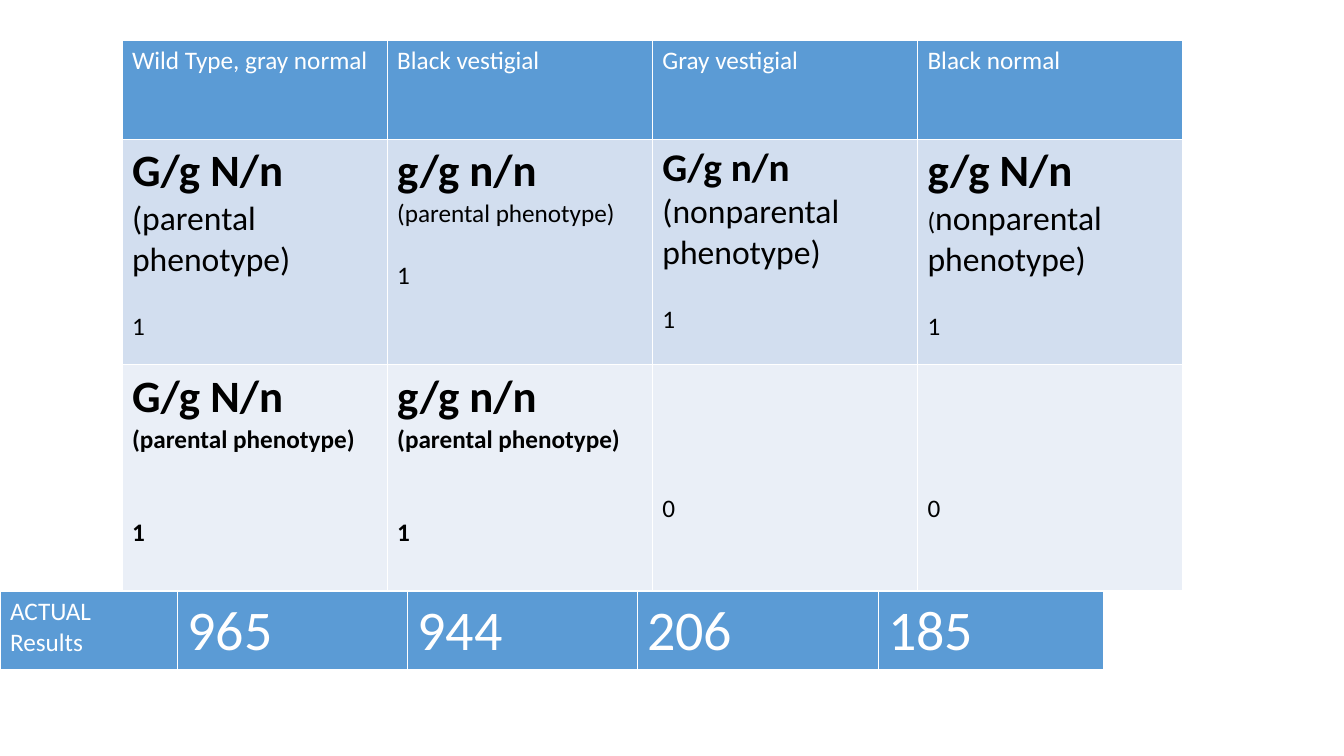
from pptx import Presentation
from pptx.dml.color import RGBColor
from pptx.util import Inches, Pt

BLUE, PALE, PALER = "5B9BD5", "D2DEEF", "EAEFF7"
WHITE, BLACK = "FFFFFF", "000000"
LINE = 22


def para(*runs, gap=0):
    return gap, runs


def plain(label, size=18):
    return [para((label, size, False))]


def offspring(genotype, size, *note):
    return [para((genotype, size, True)), para(*note), para(("1", 18, False), gap=1)]


def linked(genotype):
    return [para((genotype, 32, True)), para(("(parental phenotype)", 18, True)),
            para(("1", 18, True), gap=2)]


ZERO = [para(("0", 18, False), gap=4)]

CROSS_ROWS = [
    (0.98, BLUE, WHITE, [plain(label) for label in (
        "Wild Type, gray normal", "Black vestigial", "Gray vestigial", "Black normal")]),
    (2.24, PALE, BLACK, [
        offspring("G/g N/n", 32, ("(parental phenotype)", 24, False)),
        offspring("g/g n/n", 32, ("(parental phenotype)", 18, False)),
        offspring("G/g n/n", 28, ("(nonparental phenotype)", 24, False)),
        offspring("g/g N/n", 32, ("(", 18, False), ("nonparental phenotype)", 24, False)),
    ]),
    (2.24, PALER, BLACK, [linked("G/g N/n"), linked("g/g n/n"), ZERO, ZERO]),
]
RESULT_ROWS = [
    (0.77, BLUE, WHITE, [plain("ACTUAL Results")]
     + [plain(count, 40) for count in ("965", "944", "206", "185")]),
]
TABLES = [
    (1.21, 0.4, [2.63] * 4, CROSS_ROWS),
    (0, 5.87, [1.76, 2.28, 2.28, 2.39, 2.24], RESULT_ROWS),
]


def rgb(value):
    return RGBColor.from_string(value)


def fill_cell(cell, paragraphs, fill, color):
    cell.fill.solid()
    cell.fill.fore_color.rgb = rgb(fill)
    tf = cell.text_frame
    for i, (gap, runs) in enumerate(paragraphs):
        p = tf.add_paragraph() if i else tf.paragraphs[0]
        if i:
            p.space_before = Pt(gap * LINE)
        else:
            cell.margin_top = Inches(0.05) + Pt(gap * LINE)
        for label, size, bold in runs:
            r = p.add_run()
            r.text = label
            r.font.name = "Calibri"
            r.font.size = Pt(size)
            r.font.bold = bold
            r.font.color.rgb = rgb(color)


def add_grid(s, left, top, widths, rows):
    height = sum(row[0] for row in rows)
    table = s.shapes.add_table(len(rows), len(widths), Inches(left), Inches(top),
                               Inches(sum(widths)), Inches(height)).table
    for column, width in zip(table.columns, widths):
        column.width = Inches(width)
    for row, (row_height, fill, color, cells) in zip(table.rows, rows):
        row.height = Inches(row_height)
        for cell, paragraphs in zip(row.cells, cells):
            fill_cell(cell, paragraphs, fill, color)


def main():
    prs = Presentation()
    prs.slide_width, prs.slide_height = Inches(13.33), Inches(7.5)
    s = prs.slides.add_slide(prs.slide_layouts[6])
    for grid in TABLES:
        add_grid(s, *grid)
    prs.save("out.pptx")


if __name__ == "__main__":
    main()
